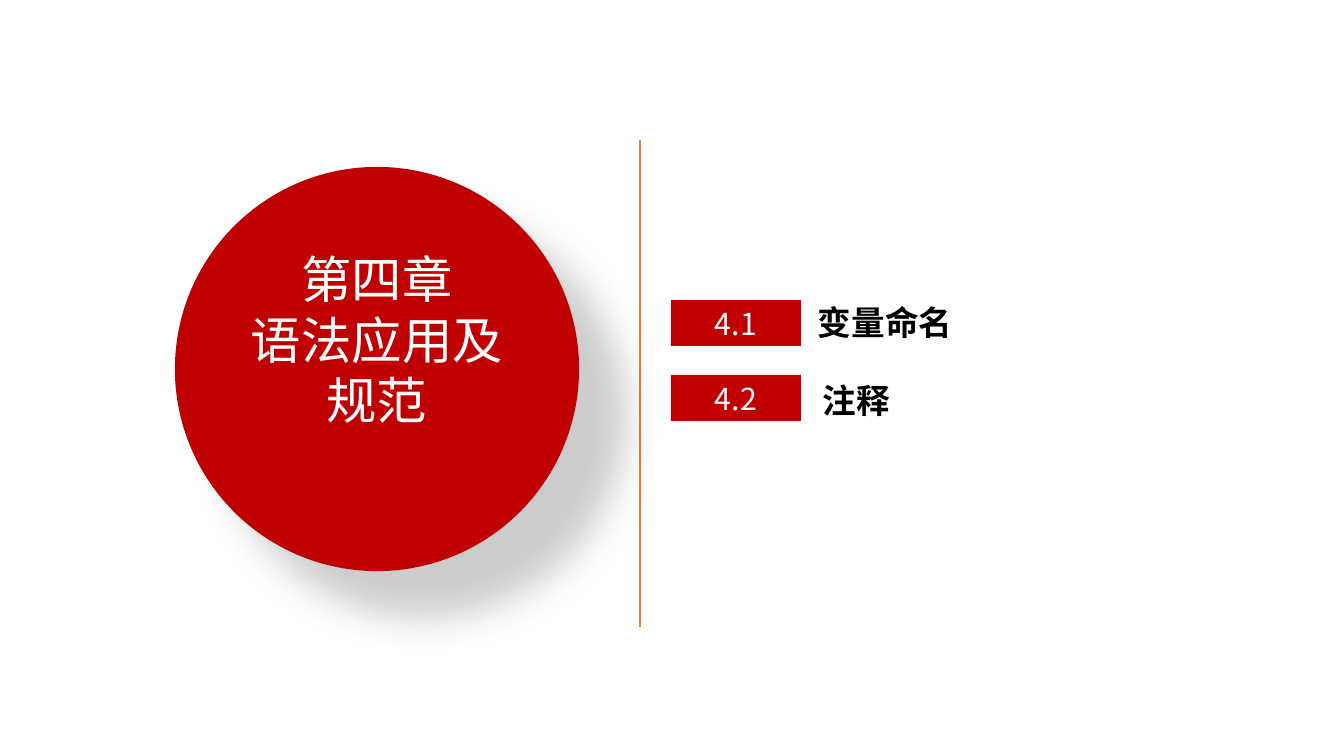
from lxml.etree import SubElement as Sub
from pptx import Presentation
from pptx.dml.color import RGBColor
from pptx.enum.shapes import MSO_CONNECTOR as Conn, MSO_SHAPE as Kind
from pptx.enum.text import MSO_ANCHOR as Anchor, PP_ALIGN as Align
from pptx.oxml.ns import qn
from pptx.util import Pt

SCALE = 914400 / 100.8
FONT = "Noto Sans CJK SC"
RED, WHITE, BLACK, ORANGE = "C00000", "FFFFFF", "000000", "ED7D31"


def px(n):
    return round(n * SCALE)


def paint(color, code):
    color.rgb = RGBColor.from_string(code)


def write(frame, lines, size, code, align, bold=False):
    for i, line in enumerate(lines):
        para = frame.add_paragraph() if i else frame.paragraphs[0]
        para.text = line
        para.alignment = align
        para.line_spacing = Pt(size * 1.2)
        font = para.font
        font.name, font.size, font.bold = FONT, Pt(size), bold
        paint(font.color, code)
        for run in para.runs:
            props = run._r.get_or_add_rPr()
            Sub(props, qn("a:ea"), typeface=FONT)


def block(slide, kind, x, y, w, h):
    shape = slide.shapes.add_shape(kind, px(x), px(y), px(w), px(h))
    shape.shadow.inherit = False
    shape.fill.solid()
    paint(shape.fill.fore_color, RED)
    shape.line.fill.background()
    return shape


def cast(shape):
    effects = shape._element.spPr.find(qn("a:effectLst"))
    shade = Sub(effects, qn("a:outerShdw"), blurRad=str(Pt(29)),
                dist=str(Pt(46)), dir=str(45 * 60000), algn="tl",
                rotWithShape="0")
    tint = Sub(shade, qn("a:srgbClr"), val=BLACK)
    Sub(tint, qn("a:alpha"), val="20000")


def rule(slide, x, top, end):
    line = slide.shapes.add_connector(Conn.STRAIGHT, px(x), px(end), px(x), px(top))
    line.line.width = Pt(1.5)
    paint(line.line.color, ORANGE)
    Sub(line._element.spPr, qn("a:effectLst"))


def disc(slide, lines):
    shape = block(slide, Kind.OVAL, 177, 169, 400, 400)
    paint(shape.line.color, RED)
    shape.line.width = Pt(3)
    cast(shape)
    frame = shape.text_frame
    frame.margin_left = frame.margin_right = 0
    frame.margin_bottom = px(65)
    frame.vertical_anchor = Anchor.MIDDLE
    write(frame, lines, 36, WHITE, Align.CENTER)


def label(slide, text, x, y, w, h):
    frame = slide.shapes.add_textbox(px(x), px(y), px(w), px(h)).text_frame
    frame.word_wrap = False
    write(frame, [text], 24, BLACK, Align.LEFT, True)


def badge(slide, text, y):
    frame = block(slide, Kind.RECTANGLE, 671, y, 130, 46).text_frame
    frame.vertical_anchor = Anchor.TOP
    write(frame, [text], 21.6, WHITE, Align.CENTER)


def main():
    deck = Presentation()
    deck.slide_width, deck.slide_height = px(1344), px(756)
    slide = deck.slides.add_slide(deck.slide_layouts[6])
    rule(slide, 640, 140, 627)
    disc(slide, ["第四章", "语法应用及规范"])
    topics = [("变量命名", 808, 297, 156, 50), ("注释", 813, 375, 89, 92)]
    for i, (text, *place) in enumerate(topics):
        label(slide, text, *place)
        badge(slide, f"4.{i + 1}", 300 + 75 * i)
    deck.save("out.pptx")


if __name__ == "__main__":
    main()
